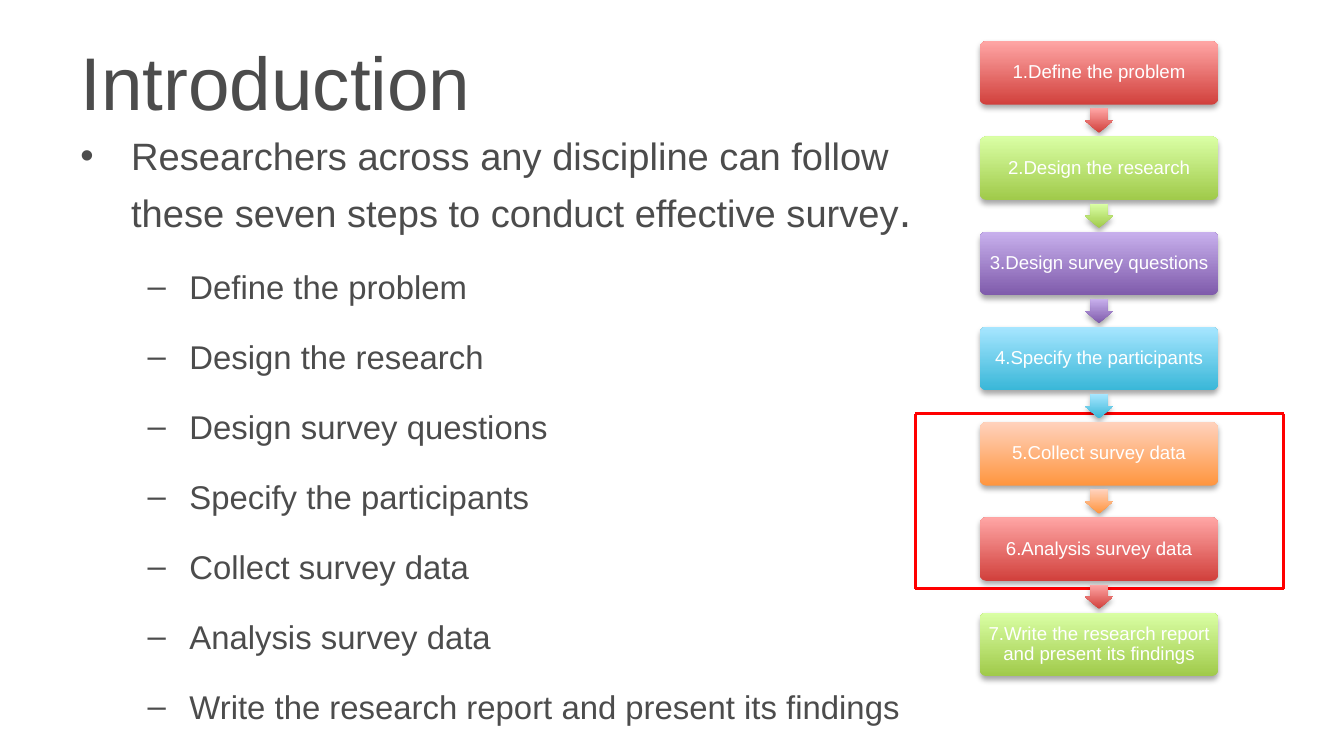
from lxml import etree
from pptx import Presentation
from pptx.dml.color import RGBColor
from pptx.enum.shapes import MSO_CONNECTOR, MSO_SHAPE
from pptx.enum.text import MSO_ANCHOR, MSO_AUTO_SIZE, PP_ALIGN
from pptx.oxml import parse_xml
from pptx.oxml.ns import nsdecls, qn
from pptx.util import Cm, Pt

LINE = MSO_CONNECTOR.STRAIGHT
BOX, ARROW = MSO_SHAPE.ROUNDED_RECTANGLE, MSO_SHAPE.RIGHT_ARROW
MIDDLE, TOP = MSO_ANCHOR.MIDDLE, MSO_ANCHOR.TOP
LEFT, CENTER = PP_ALIGN.LEFT, PP_ALIGN.CENTER
NO_FIT = MSO_AUTO_SIZE.NONE

FONT = "Arial"
GREY = RGBColor(0x4C, 0x4C, 0x4C)
WHITE = RGBColor(0xFF, 0xFF, 0xFF)
FRAME = RGBColor(0xFF, 0x00, 0x00)
# Dark and light end of each gradient
RED = RGBColor(0xD1, 0x40, 0x3C), RGBColor(0xFF, 0xA6, 0xA5)
GREEN = RGBColor(0xA0, 0xCA, 0x4A), RGBColor(0xDA, 0xFF, 0xA5)
PURPLE = RGBColor(0x7F, 0x5B, 0xAB), RGBColor(0xC8, 0xB0, 0xED)
BLUE = RGBColor(0x39, 0xB7, 0xD8), RGBColor(0xA7, 0xE6, 0xFF)
ORANGE = RGBColor(0xFF, 0x95, 0x3E), RGBColor(0xFF, 0xD2, 0xBD)

# Content
TITLE = "Introduction"
LEAD = [
    ("Researchers across any discipline can follow these seven steps "
     "to conduct effective survey", 20.4),
    (".", 24.1),
]
STEPS = [
    ("Define the problem", RED),
    ("Design the research", GREEN),
    ("Design survey questions", PURPLE),
    ("Specify the participants", BLUE),
    ("Collect survey data", ORANGE),
    ("Analysis survey data", RED),
    ("Write the research report and present its findings", GREEN),
]

# Layout in cm
STEP_X, STEP_Y, STEP_W, STEP_H, PITCH = 18.52, 0.78, 4.5, 1.2, 1.8
TIP_W, TIP_H = 0.46, 0.53
X1, X2, Y1, Y2 = 17.3, 24.26, 7.82, 11.13


def add_run(para, text, size, color):
    run = para.add_run()
    run.text = text
    run.font.name, run.font.size = FONT, Pt(size)
    run.font.color.rgb = color


def set_frame(frame, anchor):
    frame.word_wrap = True
    frame.auto_size = NO_FIT
    frame.vertical_anchor = anchor


def add_bullet(para, char, indent, hang):
    props = para._p.get_or_add_pPr()
    props.set("marL", str(Cm(indent)))
    props.set("indent", str(-Cm(hang)))
    etree.SubElement(props, qn("a:buFont")).set("typeface", FONT)
    etree.SubElement(props, qn("a:buChar")).set("char", char)


def add_block(kind, x, y, w, h, colors, angle):
    block = slide.shapes.add_shape(kind, Cm(x), Cm(y), Cm(w), Cm(h))
    block.line.fill.background()
    block.fill.gradient()
    block.fill.gradient_angle = angle
    for stop, color, place in zip(block.fill.gradient_stops, colors, (0, 1)):
        stop.color.rgb, stop.position = color, place
    block._element.spPr.append(parse_xml(
        f'<a:effectLst {nsdecls("a")}><a:outerShdw blurRad="{Pt(3.1)}" '
        f'dist="{Pt(1.8)}" dir="5400000" rotWithShape="0">'
        '<a:srgbClr val="000000"><a:alpha val="35000"/></a:srgbClr>'
        '</a:outerShdw></a:effectLst>'))
    return block


prs = Presentation()
prs.slide_width, prs.slide_height = Cm(25.4), Cm(14.29)
slide = prs.slides.add_slide(prs.slide_layouts[5])

# Title
title = slide.shapes.title
title.left, title.top = Cm(1.27), Cm(0.58)
title.width, title.height = Cm(22.86), Cm(1.88)
set_frame(title.text_frame, MIDDLE)
para = title.text_frame.paragraphs[0]
para.alignment = LEFT
add_run(para, TITLE, 40, GREY)

# Bullet list
body = slide.shapes.add_textbox(Cm(1.27), Cm(2.31), Cm(16.89), Cm(11.02))
frame = body.text_frame
set_frame(frame, TOP)
para = frame.paragraphs[0]
para.line_spacing, para.space_after = 1.08, Pt(12)
add_bullet(para, "•", 0.96, 0.96)
for text, size in LEAD:
    add_run(para, text, size, GREY)
for text, _ in STEPS:
    para = frame.add_paragraph()
    para.level = 1
    para.space_before, para.space_after = Pt(4.4), Pt(12)
    add_bullet(para, "–", 2.06, 0.79)
    add_run(para, text, 17.6, GREY)

# Red frame around steps 5 and 6
for ends in [(X1, Y1, X2, Y1), (X1, Y2, X2, Y2),
             (X1, Y1, X1, Y2), (X2, Y1, X2, Y2)]:
    edge = slide.shapes.add_connector(LINE, *map(Cm, ends))
    edge.line.color.rgb, edge.line.width = FRAME, Pt(1.5)
    etree.SubElement(edge._element.spPr, qn("a:effectLst"))

# Flow of steps, with an arrow in each gap
for i, (text, colors) in enumerate(STEPS):
    y = STEP_Y + i * PITCH
    step = add_block(BOX, STEP_X, y, STEP_W, STEP_H, colors, 90)
    step.adjustments[0] = 0.1
    frame = step.text_frame
    set_frame(frame, MIDDLE)
    frame.margin_left = frame.margin_right = Cm(0.1)
    frame.margin_top = frame.margin_bottom = Cm(0.1)
    para = frame.paragraphs[0]
    para.alignment, para.line_spacing = CENTER, 0.9
    add_run(para, f"{i + 1}.{text}", 10, WHITE)
    if i < len(STEPS) - 1:
        mid = y + (STEP_H + PITCH) / 2
        tip = add_block(ARROW, STEP_X + (STEP_W - TIP_W) / 2,
                        mid - TIP_H / 2, TIP_W, TIP_H, colors, 180)
        tip.rotation = 90
        tip.adjustments[0], tip.adjustments[1] = 0.6, 0.5

prs.save("out.pptx")
